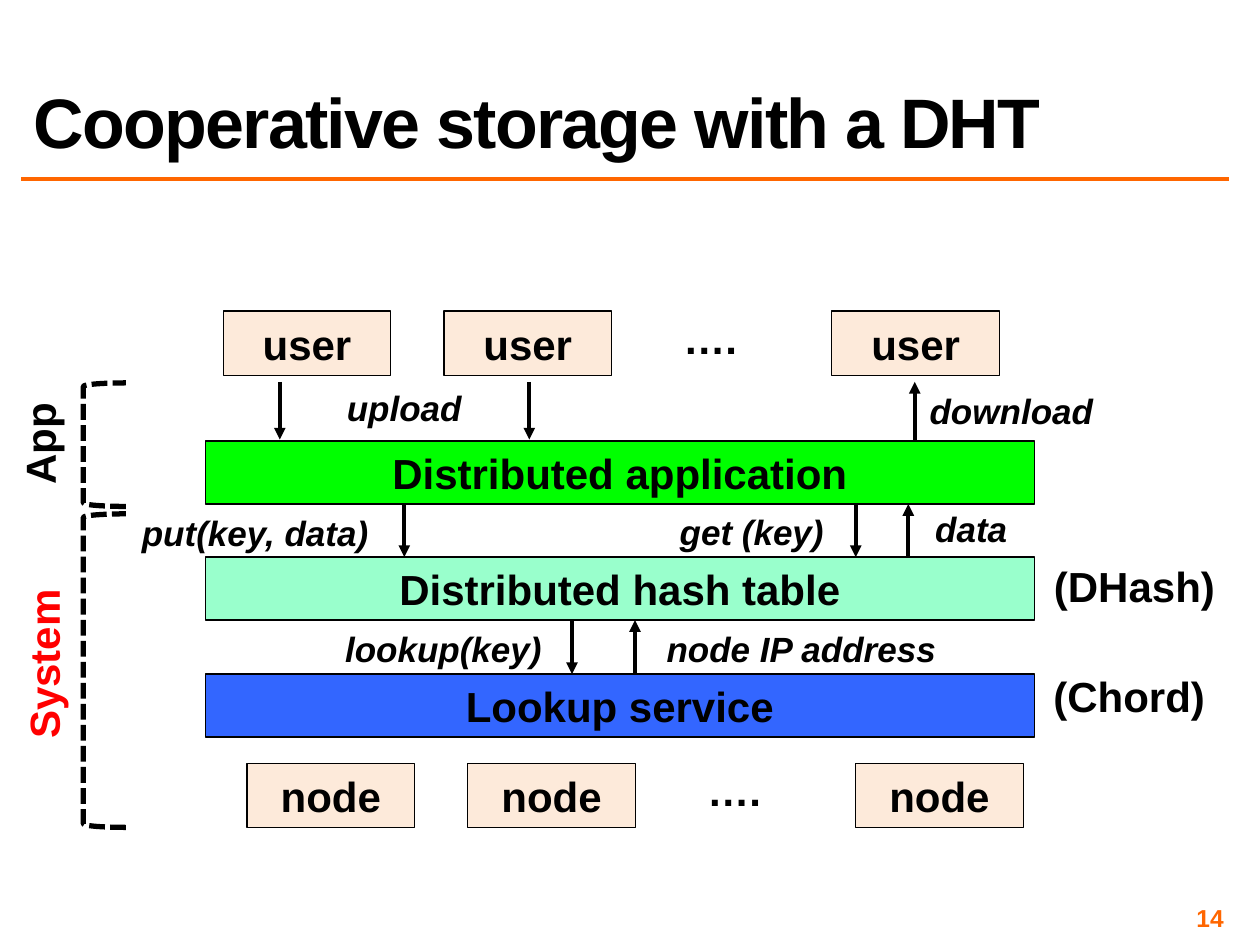
"""Builds the slide on cooperative storage with a distributed hash table."""
import pptx
import pptx.dml.color
import pptx.enum.dml
import pptx.enum.shapes
import pptx.enum.text
import pptx.oxml.ns
import pptx.util
from lxml import etree

Cm = pptx.util.Cm
Pt = pptx.util.Pt
SHAPE = pptx.enum.shapes.MSO_SHAPE
ANCHOR = pptx.enum.text.MSO_ANCHOR
ALIGN = pptx.enum.text.PP_ALIGN

COLORS = {
    "ink": "000000",
    "accent": "FF6600",
    "system": "FF0000",
    "peer": "FDEADA",
    "application": "00FF00",
    "hash_table": "99FFCC",
    "lookup": "3366FF",
}


def rgb(name):
    return pptx.dml.color.RGBColor.from_string(COLORS[name])


def write(owner, words, size=24, color="ink", italic=False, align=ALIGN.CENTER):
    frame = owner.text_frame
    frame.text = words
    paragraph = frame.paragraphs[0]
    paragraph.alignment = align
    font = paragraph.runs[0].font
    font.name, font.size = "Arial", Pt(size)
    font.bold, font.italic = True, italic
    font.color.rgb = rgb(color)
    return paragraph


def add_title(slide, words):
    title = slide.shapes.title
    title.left, title.top, title.width, title.height = Cm(0.43), Cm(0.43), Cm(24.33), Cm(2.97)
    title.text_frame.vertical_anchor = ANCHOR.BOTTOM
    heading = write(title, words, 40, align=ALIGN.LEFT)
    heading.line_spacing = 0.8
    heading.runs[0].font._element.set("spc", "-100")


def add_box(shapes, words, left, top, width, height, fill):
    box = shapes.add_shape(SHAPE.RECTANGLE, Cm(left), Cm(top), Cm(width), Cm(height))
    box.shadow.inherit = False
    box.fill.solid()
    box.fill.fore_color.rgb = rgb(fill)
    box.line.color.rgb = rgb("ink")
    box.line.width = Pt(0.75)
    box.text_frame.vertical_anchor = ANCHOR.MIDDLE
    write(box, words)


def add_label(shapes, words, left, top, width, size=24, color="ink", italic=False, rotation=0):
    height = 1.27 if size == 24 else 1.12
    label = shapes.add_textbox(Cm(left), Cm(top), Cm(width), Cm(height))
    label.text_frame.word_wrap = False
    label.rotation = rotation
    write(label, words, size, color, italic)


def add_line(shapes, start, end, color="ink", weight=2.25, arrow=True):
    line = shapes.add_connector(pptx.enum.shapes.MSO_CONNECTOR.STRAIGHT,
                                *(Cm(length) for length in start + end))
    line.line.color.rgb = rgb(color)
    line.line.width = Pt(weight)
    qn = pptx.oxml.ns.qn
    properties = line._element.spPr
    if arrow:
        etree.SubElement(properties.find(qn("a:ln")), qn("a:tailEnd"), type="triangle")
    etree.SubElement(properties, qn("a:effectLst"))


def add_bracket(shapes, top, height):
    bracket = shapes.add_shape(SHAPE.LEFT_BRACKET, Cm(1.68), Cm(top), Cm(0.86), Cm(height))
    bracket.shadow.inherit = False
    bracket.fill.background()
    bracket.line.color.rgb = rgb("ink")
    bracket.line.width = Pt(3)
    bracket.line.dash_style = pptx.enum.dml.MSO_LINE.SQUARE_DOT


def add_peers(shapes, role, left, top):
    peers = shapes.add_group_shape().shapes
    for offset in (0, 4.45, 12.27):
        add_box(peers, role, left + offset, top, 3.38, 1.3, "peer")
    add_label(peers, "….", left + 9.02, top - 0.1, 1.6)


def add_page_number(shapes, number):
    page = shapes.add_textbox(Cm(18.85), Cm(18.21), Cm(5.92), Cm(0.58))
    frame = page.text_frame
    frame.word_wrap = True
    frame.vertical_anchor = ANCHOR.MIDDLE
    frame.margin_left = frame.margin_right = frame.margin_top = frame.margin_bottom = Cm(0.1)
    write(page, number, 14, "accent", align=ALIGN.RIGHT)


def main():
    deck = pptx.Presentation()
    deck.slide_width, deck.slide_height = Cm(25.4), Cm(19.05)
    slide = deck.slides.add_slide(deck.slide_layouts[5])
    shapes = slide.shapes

    add_title(slide, "Cooperative storage with a DHT")
    add_line(shapes, (0.43, 3.61), (24.77, 3.61), "accent", 2, arrow=False)
    add_page_number(shapes, "14")

    for layer, top, fill in (
        ("Distributed application", 8.89, "application"),
        ("Distributed hash table", 11.23, "hash_table"),
        ("Lookup service", 13.59, "lookup"),
    ):
        add_box(shapes, layer, 4.14, top, 16.71, 1.27, fill)

    add_peers(shapes, "user", 4.5, 6.27)
    add_peers(shapes, "node", 4.98, 15.39)

    for x, start, end in (
        (5.64, 7.7, 8.86), (10.67, 7.7, 8.86), (18.44, 8.86, 7.7),
        (8.15, 10.16, 11.23), (17.25, 10.16, 11.23), (18.31, 11.23, 10.16),
        (11.53, 12.52, 13.59), (12.8, 13.56, 12.5),
    ):
        add_line(shapes, (x, start), (x, end))

    for message, left, top, width in (
        ("upload", 6.73, 7.67, 2.84),
        ("download", 18.47, 7.72, 3.84),
        ("put(key, data)", 2.59, 10.19, 5.11),
        ("get (key)", 13.44, 10.16, 3.43),
        ("data", 18.59, 10.11, 1.98),
        ("lookup(key)", 6.68, 12.52, 4.52),
        ("node IP address", 13.16, 12.52, 5.99),
    ):
        add_label(shapes, message, left, top, width, size=20, italic=True)

    add_label(shapes, "(DHash)", 20.98, 11.18, 3.78)
    add_label(shapes, "(Chord)", 20.96, 13.39, 3.61)

    add_bracket(shapes, 7.72, 2.49)
    add_bracket(shapes, 10.36, 6.32)
    add_label(shapes, "App", -0.3, 8.31, 2.18, rotation=270)
    add_label(shapes, "System", -0.91, 12.75, 3.56, color="system", rotation=270)

    deck.save("out.pptx")


if __name__ == "__main__":
    main()
